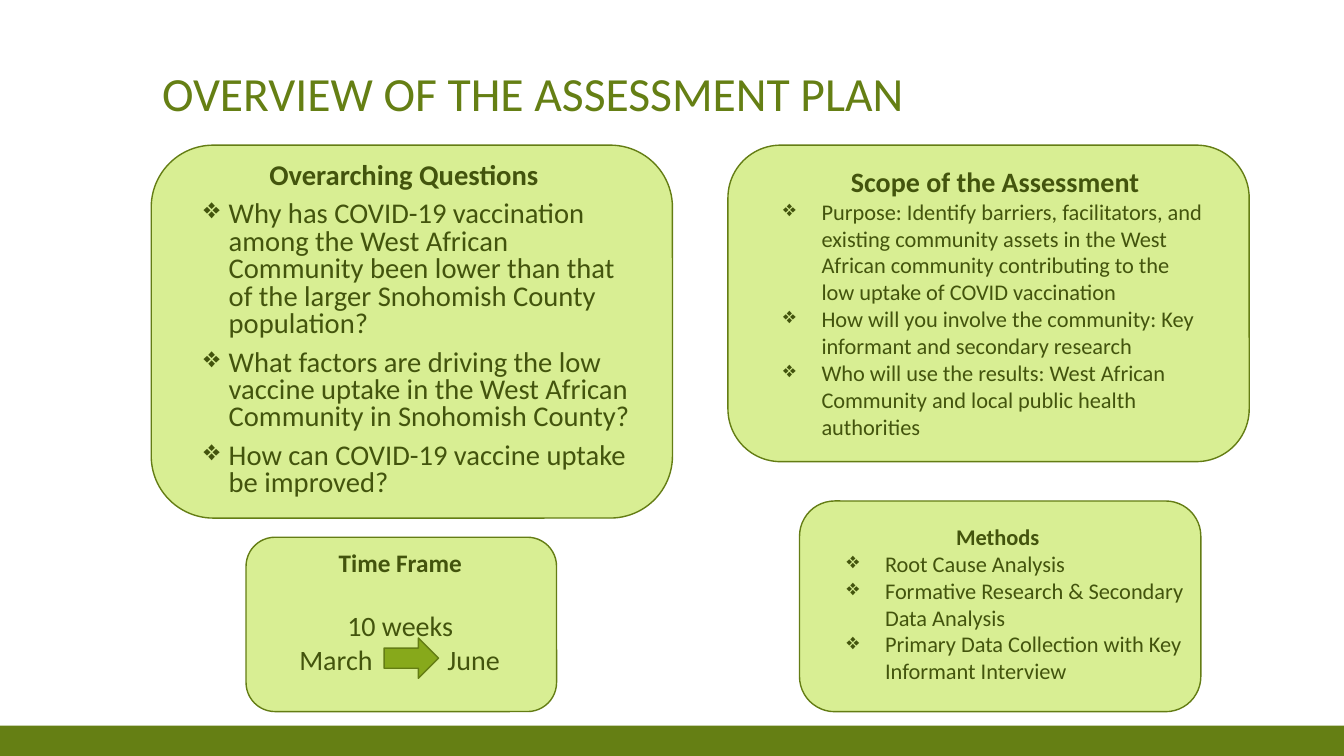
from dataclasses import dataclass

from lxml.etree import SubElement
from pptx import Presentation
from pptx.dml.color import RGBColor
from pptx.enum.shapes import MSO_SHAPE as Preset
from pptx.enum.text import MSO_ANCHOR as Anchor, PP_ALIGN as Align
from pptx.oxml.ns import qn
from pptx.slide import Slide
from pptx.text.text import TextFrame
from pptx.util import Pt

PX = 9144


@dataclass(frozen=True)
class Theme:
    font: str = "Calibri"
    title: str = "657F14"
    outline: str = "647D14"
    panel: str = "D8EE93"
    arrow: str = "87A91B"
    text: str = "43540D"
    title_size: float = 34
    question_size: float = 20.4
    large: float = 20
    medium: float = 18
    small: float = 16


THEME = Theme()


@dataclass(frozen=True)
class Area:
    left: int
    top: int
    width: int
    height: int

    def emu(self) -> tuple[int, ...]:
        return tuple(side * PX for side in (self.left, self.top, self.width, self.height))


@dataclass(frozen=True)
class Line:
    text: str
    size: float
    bold: bool = False
    color: str = THEME.text
    align: Align = Align.LEFT
    margin: int = 0
    hanging: int = 0
    spacing: float = 1.0
    before: float = 0


@dataclass(frozen=True)
class Card:
    panel: Area
    text: Area
    lines: list[Line]


@dataclass(frozen=True)
class Month:
    name: str
    area: Area


def heading(text: str, size: float, margin: int = 0, spacing: float = 1.0) -> Line:
    return Line(text, size, bold=True, align=Align.CENTER, margin=margin, spacing=spacing)


def bullets(texts: list[str], size: float, margin: int, hanging: int,
            spacing: float = 1.0, before: float = 0) -> list[Line]:
    return [Line(text, size, margin=margin, hanging=hanging, spacing=spacing, before=before)
            for text in texts]


QUESTIONS = Card(Area(150, 144, 517, 370), Area(152, 157, 492, 338), [
    heading("Overarching Questions", THEME.question_size, 5, 0.8),
    *bullets([
        "Why has COVID-19 vaccination among the West African Community been lower than that "
        "of the larger Snohomish County population?",
        "What factors are driving the low vaccine uptake in the West African Community in "
        "Snohomish County?",
        "How can COVID-19 vaccine uptake be improved?",
    ], THEME.question_size, 65, 25, 0.8, 8),
])

SCOPE = Card(Area(722, 144, 517, 314), Area(767, 158, 440, 286), [
    heading("Scope of the Assessment", THEME.large),
    *bullets([
        "Purpose: Identify barriers, facilitators, and existing community assets in the West "
        "African community contributing to the low uptake of COVID vaccination",
        "How will you involve the community: Key informant and secondary research",
        "Who will use the results: West African Community and local public health authorities",
    ], THEME.small, 38, 38),
])

METHODS = Card(Area(793, 497, 398, 209), Area(780, 514, 414, 172), [
    heading("Methods", THEME.small, 5),
    *bullets([
        "Root Cause Analysis",
        "Formative Research & Secondary Data Analysis",
        "Primary Data Collection with Key Informant Interview",
    ], THEME.small, 88, 38),
])

TIME_FRAME = Card(Area(244, 533, 308, 173), Area(244, 538, 306, 95), [
    heading("Time Frame", THEME.medium),
    Line("10 weeks", THEME.large, align=Align.CENTER, before=22),
])

MONTHS = [
    Month("March", Area(287, 633, 94, 44)),
    Month("June", Area(434, 633, 94, 44)),
]


def add_block(page: Slide, preset: Preset, area: Area, fill: str, outline: str = "") -> None:
    block = page.shapes.add_shape(preset, *area.emu())
    block.shadow.inherit = False
    block.fill.solid()
    block.fill.fore_color.rgb = RGBColor.from_string(fill)
    if outline:
        block.line.color.rgb = RGBColor.from_string(outline)
        block.line.width = Pt(1)
    else:
        block.line.fill.background()


def write_line(frame: TextFrame, line: Line, first: bool) -> None:
    para = frame.paragraphs[0] if first else frame.add_paragraph()
    para.alignment = line.align
    para.line_spacing = line.spacing
    para.space_before = Pt(line.before)
    properties = para._p.get_or_add_pPr()
    properties.set("marL", str(line.margin * PX))
    properties.set("indent", str(-line.hanging * PX))
    if line.hanging:
        bullet_color = SubElement(properties, qn("a:buClr"))
        SubElement(bullet_color, qn("a:srgbClr"), val=line.color)
        SubElement(properties, qn("a:buChar"), char="❖")
    span = para.add_run()
    span.text = line.text
    span.font.name = THEME.font
    span.font.size = Pt(line.size)
    span.font.bold = line.bold
    span.font.color.rgb = RGBColor.from_string(line.color)


def add_text(page: Slide, area: Area, lines: list[Line], anchor: Anchor = Anchor.TOP) -> None:
    frame = page.shapes.add_textbox(*area.emu()).text_frame
    frame.word_wrap = True
    frame.vertical_anchor = anchor
    for number, line in enumerate(lines):
        write_line(frame, line, number == 0)


def main() -> None:
    deck = Presentation()
    deck.slide_width, deck.slide_height = 1333 * PX, 750 * PX
    page = deck.slides.add_slide(deck.slide_layouts[6])

    add_block(page, Preset.RECTANGLE, Area(0, 720, 1333, 30), THEME.title)
    title = Line("OVERVIEW OF THE ASSESSMENT PLAN", THEME.title_size,
                 color=THEME.title, spacing=0.9)
    add_text(page, Area(151, 1, 1000, 125), [title], Anchor.BOTTOM)
    for card in (QUESTIONS, SCOPE, METHODS, TIME_FRAME):
        add_block(page, Preset.ROUNDED_RECTANGLE, card.panel, THEME.panel, THEME.outline)
        add_text(page, card.text, card.lines)
    for month in MONTHS:
        add_text(page, month.area, [Line(month.name, THEME.large)])
    add_block(page, Preset.RIGHT_ARROW, Area(381, 633, 54, 40), THEME.arrow, THEME.outline)

    deck.save("out.pptx")


if __name__ == "__main__":
    main()
